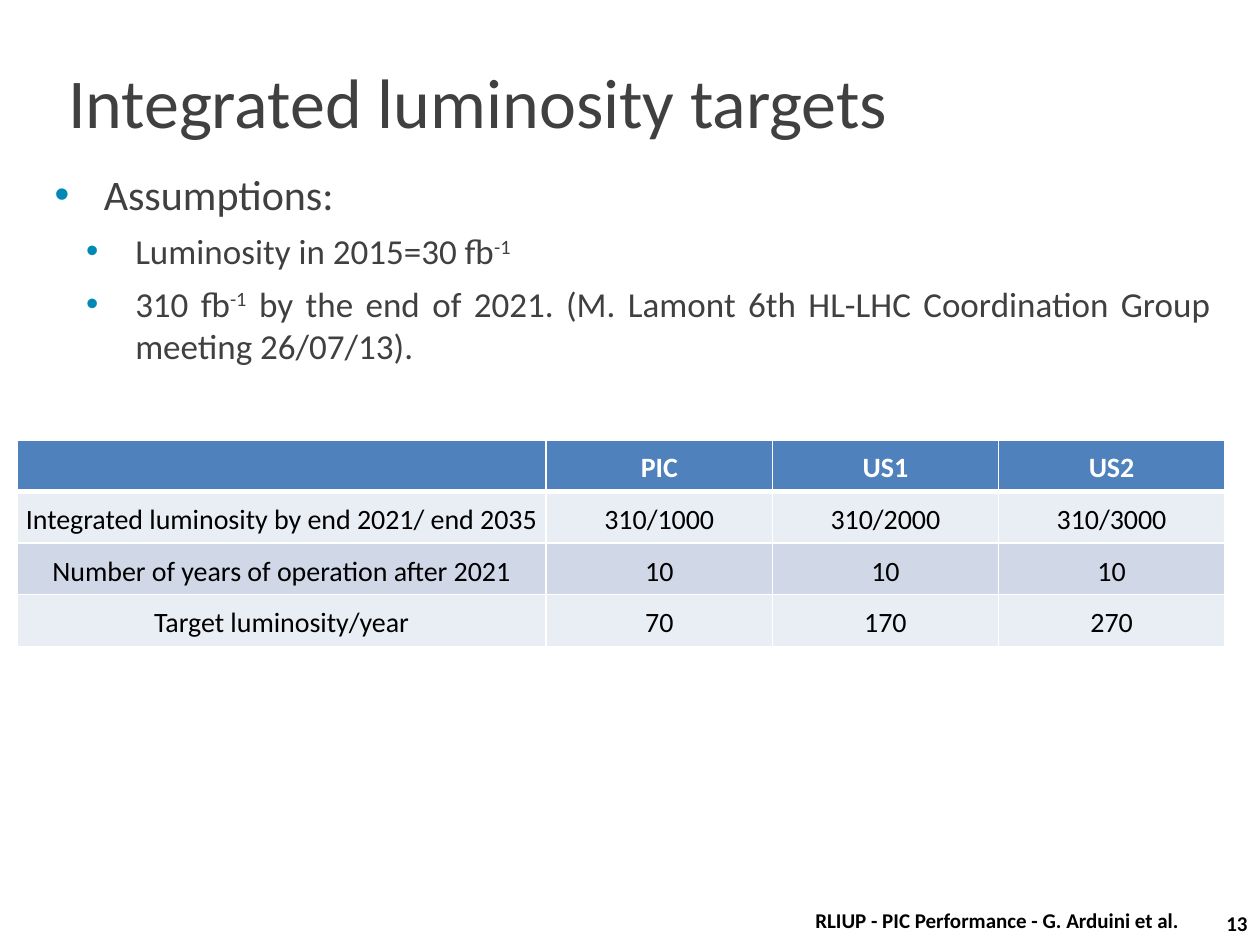
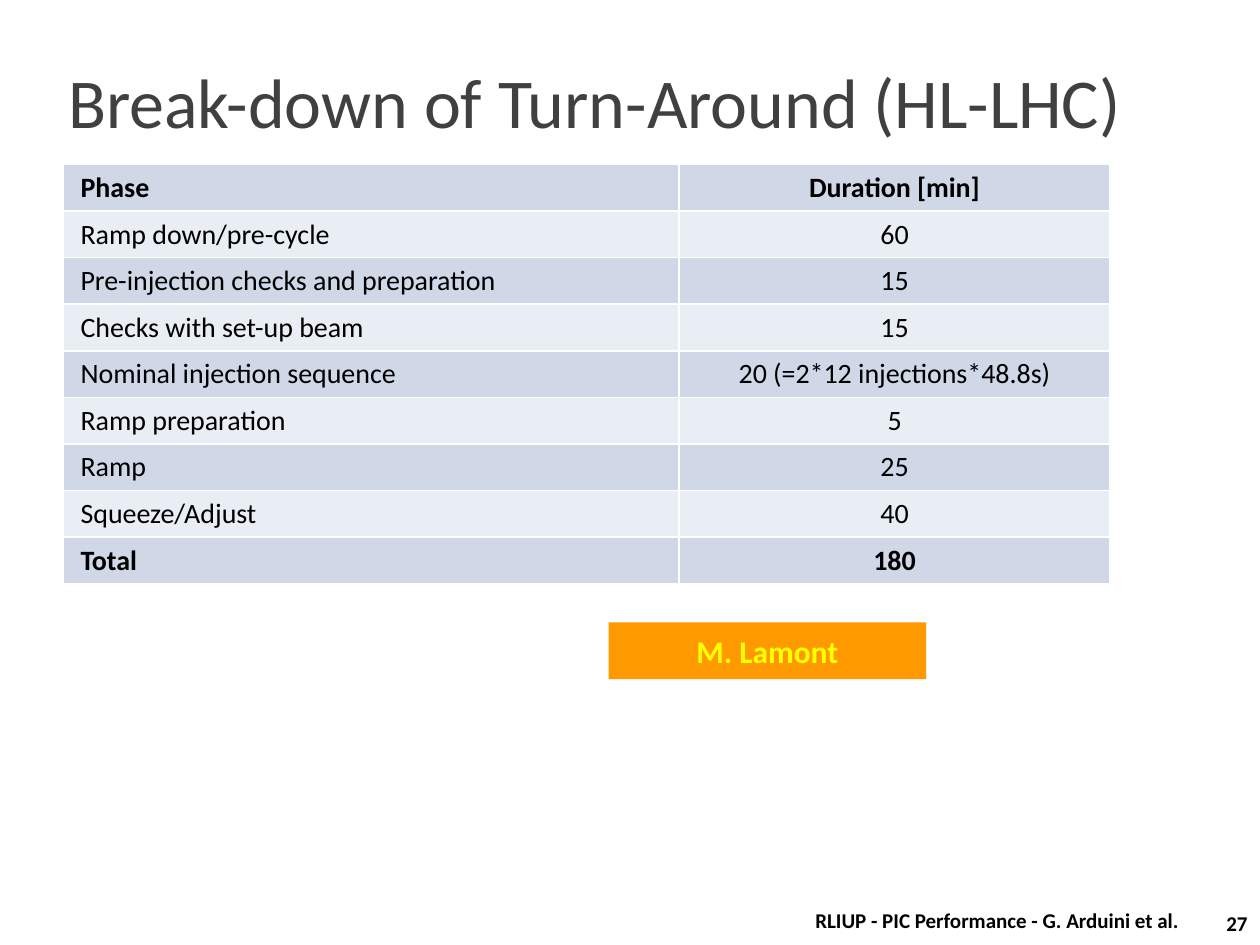
import pptx
import pptx.util
import pptx.oxml
import pptx.oxml.ns
import pptx.dml.color
import pptx.enum.shapes
import pptx.enum.text
from lxml import etree

FONT = "Calibri"
COLORS = {
    "title": "404040", "ink": "000000", "white": "FFFFFF", "bullet": "0089B5",
    "header": "4F81BD", "dark_band": "D0D8E8", "light_band": "E9EDF4",
    "credit": "FF9900", "credit_text": "FFFF00",
}
COLS, ROWS = 20, 15
WIDTH, HEIGHT = pptx.util.Inches(10), pptx.util.Inches(7.5)
ALIGN = pptx.enum.text.PP_ALIGN
MIDDLE = pptx.enum.text.MSO_ANCHOR.MIDDLE
FOOTER = "RLIUP - PIC Performance - G. Arduini et al."

TARGETS = [
    ["", "PIC", "US1", "US2"],
    ["Integrated luminosity by end 2021/ end 2035", "310/1000", "310/2000", "310/3000"],
    ["Number of years of operation after 2021", "10", "10", "10"],
    ["Target luminosity/year", "70", "170", "270"],
]
PHASES = [
    ["Phase", "Duration [min]"],
    ["Ramp down/pre-cycle", "60"],
    ["Pre-injection checks and preparation", "15"],
    ["Checks with set-up beam", "15"],
    ["Nominal injection sequence", "20 (=2*12 injections*48.8s)"],
    ["Ramp preparation", "5"],
    ["Ramp", "25"],
    ["Squeeze/Adjust", "40"],
    ["Total", "180"],
]
ASSUMPTIONS = [
    (0, "Assumptions:"),
    (1, "Luminosity in 2015=30 fb^-1^"),
    (1, "310 fb^-1^ by the end of 2021. (M. Lamont 6th HL-LHC Coordination Group "
        "meeting 26/07/13)."),
]


def across(cols):
    return round(WIDTH * cols / COLS)


def down(rows):
    return round(HEIGHT * rows / ROWS)


def box(col, row, cols, rows):
    return across(col), down(row), across(cols), down(rows)


def rgb(name):
    return pptx.dml.color.RGBColor.from_string(COLORS[name])


def style(p, size, color, bold=False, align=ALIGN.LEFT):
    p.alignment = align
    for r in p.runs:
        r.font.name = FONT
        r.font.size = pptx.util.Pt(size)
        r.font.bold = bold
        r.font.color.rgb = rgb(color)


def set_margins(target, side, top, bottom=None):
    target.margin_left = target.margin_right = pptx.util.Inches(side)
    target.margin_top = pptx.util.Inches(top)
    target.margin_bottom = pptx.util.Inches(top if bottom is None else bottom)


def add_text(s, place, text, size, color, bold=False, align=ALIGN.LEFT, margins=(0.1, 0)):
    tf = s.shapes.add_textbox(*box(*place)).text_frame
    tf.word_wrap = True
    tf.vertical_anchor = MIDDLE
    set_margins(tf, *margins)
    tf.text = text
    style(tf.paragraphs[0], size, color, bold, align)


def add_bullet(p):
    pPr = p._p.get_or_add_pPr()
    buClr = etree.SubElement(pPr, pptx.oxml.ns.qn("a:buClr"))
    etree.SubElement(buClr, pptx.oxml.ns.qn("a:srgbClr"), val=COLORS["bullet"])
    etree.SubElement(pPr, pptx.oxml.ns.qn("a:buFont"), typeface="Arial")
    etree.SubElement(pPr, pptx.oxml.ns.qn("a:buChar"), char="•")
    return pPr


def add_bullets(s, place, items):
    tf = s.shapes.add_textbox(*box(*place)).text_frame
    tf.word_wrap = True
    set_margins(tf, 0.1, 0.08, 0)
    for i, (level, text) in enumerate(items):
        p = tf.add_paragraph() if i else tf.paragraphs[0]
        p.level = level
        pPr = add_bullet(p)
        pPr.set("marL", str(pptx.util.Inches(0.59 + 0.25 * level)))
        pPr.set("indent", str(pptx.util.Inches(-0.39)))
        p.line_spacing = 1.0 if level else 1.2
        p.space_before = pptx.util.Pt(6 if i else 0)
        for n, part in enumerate(text.split("^")):
            r = p.add_run()
            r.text = part
            if n % 2:
                r._r.get_or_add_rPr().set("baseline", "30000")
        style(p, 20 if level else 24, "title", align=ALIGN.JUSTIFY)


def add_borders(cell, bottom, top):
    tcPr = cell._tc.get_or_add_tcPr()
    for side, width in (("L", 1), ("R", 1), ("T", top), ("B", bottom)):
        ln = etree.SubElement(tcPr, pptx.oxml.ns.qn("a:ln" + side), w=str(pptx.util.Pt(width)))
        fill = etree.SubElement(ln, pptx.oxml.ns.qn("a:solidFill"))
        etree.SubElement(fill, pptx.oxml.ns.qn("a:srgbClr"), val=COLORS["white"])


def add_grid(s, col, row, widths, row_height, data, side, header=False, left_first=False,
             bold_rows=(0,), spacing=1.0):
    place = box(col, row, sum(widths), row_height * len(data))
    table = s.shapes.add_table(len(data), len(widths), *place).table
    for column, width in zip(table.columns, widths):
        column.width = across(width)
    for i, values in enumerate(data):
        table.rows[i].height = down(row_height)
        is_header = header and i == 0
        band = "light_band" if (i + header) % 2 == (0 if header else 1) and i else "dark_band"
        for j, value in enumerate(values):
            cell = table.cell(i, j)
            add_borders(cell, 3 if is_header else 1, 3 if header and i == 1 else 1)
            cell.fill.solid()
            cell.fill.fore_color.rgb = rgb("header" if is_header else band)
            set_margins(cell, side, 0.05)
            if not is_header:
                cell.vertical_anchor = MIDDLE
            p = cell.text_frame.paragraphs[0]
            p.text = value
            p.line_spacing = spacing
            align = ALIGN.LEFT if left_first and j == 0 else ALIGN.CENTER
            style(p, 16, "white" if is_header else "ink", i in bold_rows, align)


def add_credit(s, place, text):
    sp = s.shapes.add_shape(pptx.enum.shapes.MSO_SHAPE.RECTANGLE, *box(*place))
    sp.shadow.inherit = False
    sp.fill.solid()
    sp.fill.fore_color.rgb = rgb("credit")
    sp.line.fill.background()
    tf = sp.text_frame
    tf.vertical_anchor = MIDDLE
    tf.text = text
    style(tf.paragraphs[0], 18, "credit_text", True, ALIGN.CENTER)


def new_slide(prs, title, number):
    s = prs.slides.add_slide(prs.slide_layouts[6])
    add_text(s, (1, 0.6, 18, 2), title, 40, "title", margins=(0.04, 0))
    add_text(s, (12.66, 14.2, 6.34, 0.8), FOOTER, 12, "ink", True, ALIGN.CENTER, (0.1, 0.05))
    add_text(s, (19, 14.3, 1, 0.7), str(number), 12, "ink", True, ALIGN.RIGHT)
    return s


def main():
    prs = pptx.Presentation()
    prs.slide_width, prs.slide_height = WIDTH, HEIGHT

    s = new_slide(prs, "Integrated luminosity targets", 13)
    add_grid(s, 0.27, 6.98, [8.4] + [3.59] * 3, 0.82, TARGETS, 0.04, header=True, spacing=1.15)
    add_bullets(s, (0.27, 2.36, 19.15, 2.9), ASSUMPTIONS)

    s = new_slide(prs, "Break-down of Turn-Around (HL-LHC)", 27)
    add_grid(s, 1, 2.61, [9.78, 6.84], 0.74, PHASES, 0.14, left_first=True,
             bold_rows=(0, len(PHASES) - 1))
    add_credit(s, (9.66, 9.88, 5.04, 0.9), "M. Lamont")

    prs.save("out.pptx")


if __name__ == "__main__":
    main()
